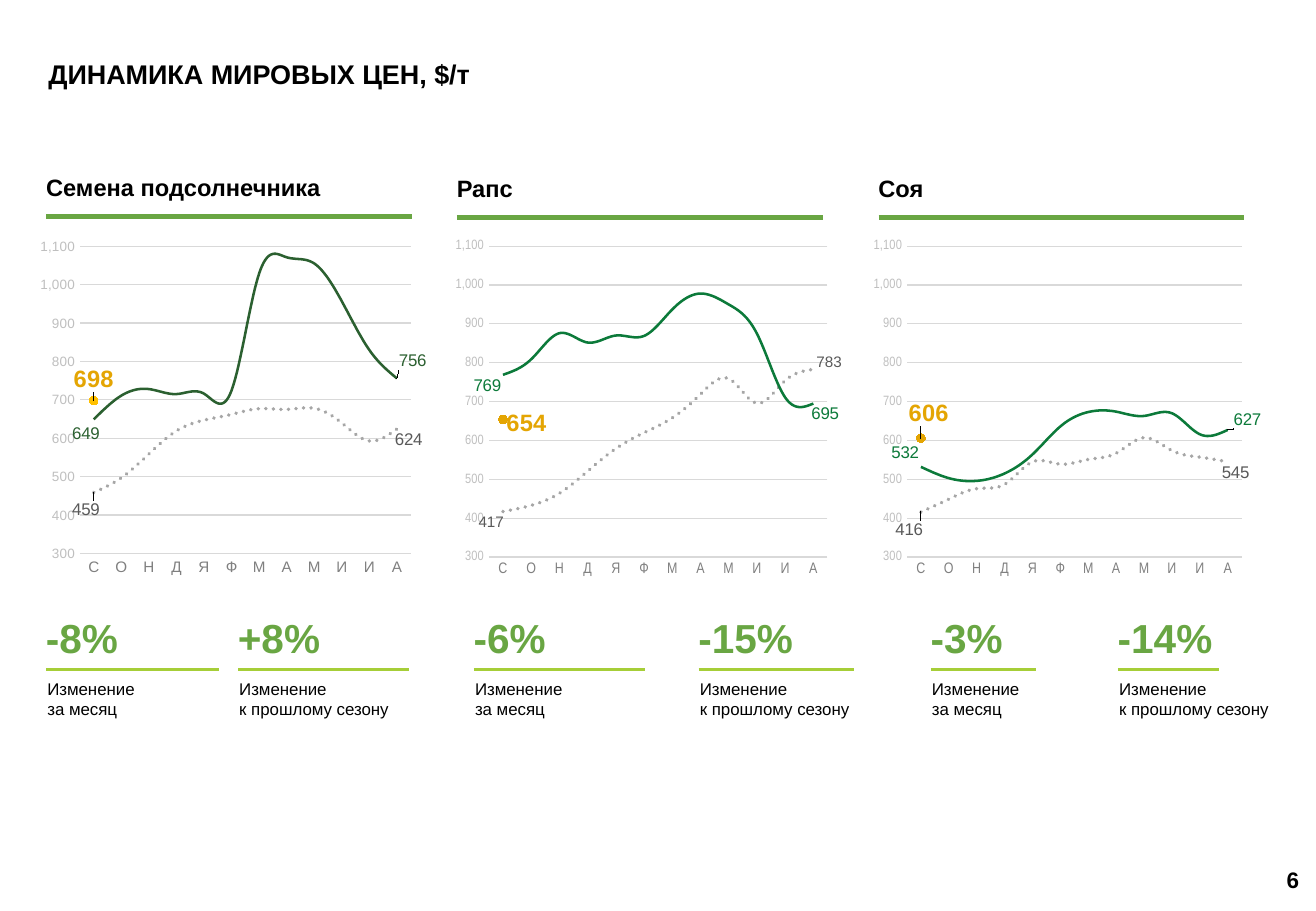
from dataclasses import dataclass
from pptx import Presentation
from pptx.chart.data import CategoryChartData
from pptx.dml.color import RGBColor
from pptx.enum.chart import (XL_CHART_TYPE, XL_LABEL_POSITION,
                             XL_MARKER_STYLE, XL_TICK_MARK)
from pptx.enum.dml import MSO_LINE
from pptx.enum.shapes import MSO_CONNECTOR
from pptx.enum.text import MSO_ANCHOR, PP_ALIGN
from pptx.oxml import parse_xml
from pptx.oxml.ns import nsdecls, qn
from pptx.util import Inches, Pt

SLIDE_WIDTH, SLIDE_HEIGHT = Inches(10.83), Inches(7.5)
MONTHS = list("СОНДЯФМАМИИА")


@dataclass(frozen=True)
class Theme:
    font: str = "Arial"
    narrow: str = "Arial Narrow"
    black: str = "000000"
    green: str = "69A643"
    lime: str = "A6CE38"
    dark_green: str = "2B6030"
    crop_green: str = "0C7A3A"
    gold: str = "E4A503"
    yellow: str = "FFC000"
    dots: str = "A6A6A6"
    label_grey: str = "595959"
    month_grey: str = "808080"
    value_grey: str = "BFBFBF"
    grid: str = "D9D9D9"
    title_size: float = 16
    heading_size: float = 14
    number_size: float = 24
    body_size: float = 10
    month_size: float = 9
    value_size: float = 8
    page_size: float = 13.3


THEME = Theme()


@dataclass
class Box:
    """Shares of the slide's size, in percent."""
    left: float
    top: float
    width: float
    height: float = 0

    def place(self):
        return (int(SLIDE_WIDTH * self.left / 100), int(SLIDE_HEIGHT * self.top / 100),
                int(SLIDE_WIDTH * self.width / 100), int(SLIDE_HEIGHT * self.height / 100))


@dataclass
class Crop:
    name: str
    box: Box
    chart_shift: float
    plot: tuple            # inner plot area: x, y, width, height
    axis_font: str
    line: str
    marker: str
    past: list
    previous: list
    current: int
    past_size: float
    label_shifts: list     # past first, past last, previous first, previous last, current
    changes: list          # text, caption, left shift, rule width


MONTH, SEASON = "Изменение\nза месяц", "Изменение\nк прошлому сезону"
CROPS = [
    Crop("Семена подсолнечника", Box(2.59, 18.67, 27.8, 77), -0.1, (0.12, 0.04, 0.84, 0.87),
         THEME.font, THEME.dark_green, THEME.yellow,
         [459, 497, 559, 619, 647, 662, 677, 675, 678, 640, 593, 624],
         [649, 711, 728, 715, 716, 724, 1028, 1071, 1055, 957, 830, 756], 698, 10,
         [(-0.02, 0.05), (0.03, 0.03), (-0.02, 0.04), (0.04, -0.05), (0, -0.06)],
         [("-8%", MONTH, 0, 13.1), ("+8%", SEASON, 14.58, 13)]),
    Crop("Рапс", Box(33.8, 18.8, 27.8, 77), 0.36, (0.1, 0.04, 0.86, 0.88),
         THEME.narrow, THEME.crop_green, THEME.gold,
         [417, 433, 464, 521, 579, 620, 658, 719, 759, 696, 754, 783],
         [769, 809, 876, 852, 870, 869, 937, 978, 950, 875, 711, 695], 654, 9,
         [(-0.03, 0.03), (0.04, -0.02), (-0.04, 0.03), (0.03, 0.03), (0.06, 0.01)],
         [("-6%", MONTH, 1.29, 13), ("-15%", SEASON, 18.37, 11.8)]),
    Crop("Соя", Box(65.84, 18.8, 27.8, 77), 0.09, (0.1, 0.04, 0.85, 0.88),
         THEME.narrow, THEME.crop_green, THEME.gold,
         [416, 449, 476, 487, 545, 539, 551, 567, 607, 574, 557, 545],
         [532, 503, 496, 515, 564, 636, 673, 674, 663, 670, 616, 627], 606, 10,
         [(-0.03, 0.05), (0.02, 0.03), (-0.04, -0.04), (0.05, -0.03), (0.02, -0.07)],
         [("-3%", MONTH, 3.97, 8), ("-14%", SEASON, 18.19, 7.7)]),
]


def style_font(font, size, color, name=THEME.font, bold=False):
    font.size, font.name, font.bold = Pt(size), name, bold
    font.color.rgb = RGBColor.from_string(color)


def add_text(slide, box, text, size, color=THEME.black, bold=False, spacing=None,
             anchor=MSO_ANCHOR.TOP, align=PP_ALIGN.LEFT, wrap=True):
    frame = slide.shapes.add_textbox(*box.place()).text_frame
    frame.word_wrap, frame.vertical_anchor = wrap, anchor
    frame.text = text
    for paragraph in frame.paragraphs:
        paragraph.alignment = align
        paragraph.line_spacing = spacing
        for run in paragraph.runs:
            style_font(run.font, size, color, bold=bold)


def add_rule(slide, box, color, weight):
    left, top, width, _ = box.place()
    rule = slide.shapes.add_connector(MSO_CONNECTOR.STRAIGHT, left, top, left + width, top)
    rule.line.color.rgb = RGBColor.from_string(color)
    rule.line.width = Pt(weight)
    rule._element.spPr.append(parse_xml(f"<a:effectLst {nsdecls('a')}/>"))


def manual_layout(inner=False, **shares):
    target = '<c:layoutTarget val="inner"/>' if inner else ""
    modes = '<c:xMode val="edge"/><c:yMode val="edge"/>' if inner else ""
    parts = "".join(f'<c:{key} val="{share}"/>' for key, share in shares.items())
    return parse_xml(f"<c:layout {nsdecls('c')}><c:manualLayout>{target}{modes}{parts}"
                     "</c:manualLayout></c:layout>")


def label_point(series, index, shift, size, color, bold=False):
    label = series.points[index].data_label
    style_font(label.font, size, color, bold=bold)
    label.position = XL_LABEL_POSITION.CENTER
    element = series._element.xpath(f'c:dLbls/c:dLbl[c:idx/@val="{index}"]')[0]
    element.insert(1, manual_layout(x=shift[0], y=shift[1]))


def style_series(series, color, weight, dotted=False):
    series.smooth = True
    series.marker.style = XL_MARKER_STYLE.NONE
    series.data_labels.show_value = False
    line = series.format.line
    line.color.rgb = RGBColor.from_string(color)
    line.width = Pt(weight)
    if dotted:
        line.dash_style = MSO_LINE.ROUND_DOT
        series._element.xpath("c:spPr/a:ln")[0].set("cap", "rnd")


def style_axes(chart, font_name):
    months, prices = chart.category_axis, chart.value_axis
    for axis, size, color in ((months, THEME.month_size, THEME.month_grey),
                              (prices, THEME.value_size, THEME.value_grey)):
        axis.major_tick_mark = axis.minor_tick_mark = XL_TICK_MARK.NONE
        style_font(axis.tick_labels.font, size, color, font_name)
    prices.minimum_scale, prices.maximum_scale, prices.major_unit = 300, 1100, 100
    prices.tick_labels.number_format = "#,##0"
    prices.tick_labels.number_format_is_linked = False
    prices.format.line.fill.background()
    for line in (months.format.line, prices.major_gridlines.format.line):
        line.color.rgb = RGBColor.from_string(THEME.grid)
        line.width = Pt(0.75)


def add_price_chart(slide, box, crop):
    data = CategoryChartData(number_format="0")
    data.categories = MONTHS
    data.add_series("Series 1", crop.past)
    data.add_series("Series 2", crop.previous)
    data.add_series("Series 3", [crop.current] + [None] * (len(MONTHS) - 1))
    chart = slide.shapes.add_chart(XL_CHART_TYPE.LINE_MARKERS, *box.place(), data).chart
    chart.has_legend = chart.has_title = False
    style_font(chart.font, THEME.body_size, THEME.black)
    chart.plots[0].vary_by_categories = False
    style_axes(chart, crop.axis_font)
    plot_area = chart._chartSpace.chart.plotArea
    for layout in plot_area.findall(qn("c:layout")):
        plot_area.remove(layout)
    plot_area.insert(0, manual_layout(True, **dict(zip("xywh", crop.plot))))

    # Price lines and the current price
    past, previous, current = chart.plots[0].series
    style_series(past, THEME.dots, 2.25, dotted=True)
    style_series(previous, crop.line, 1.5)
    style_series(current, crop.marker, 2.25)
    marker = current.marker
    marker.style, marker.size = XL_MARKER_STYLE.CIRCLE, 5
    marker.format.fill.solid()
    marker.format.fill.fore_color.rgb = RGBColor.from_string(crop.marker)
    marker.format.line.color.rgb = RGBColor.from_string(crop.marker)

    # Labels at the ends
    shifts = iter(crop.label_shifts)
    for series, size, color in ((past, crop.past_size, THEME.label_grey),
                                (previous, THEME.body_size, crop.line)):
        for index in (0, len(MONTHS) - 1):
            label_point(series, index, next(shifts), size, color)
    label_point(current, 0, next(shifts), THEME.heading_size, THEME.gold, bold=True)


def add_change(slide, box, value, caption):
    add_text(slide, Box(box.left, box.top, 13, 7.07), value, THEME.number_size,
             THEME.green, True, 0.9, MSO_ANCHOR.MIDDLE)
    add_rule(slide, Box(box.left + 0.92, box.top + 6.75, box.width), THEME.lime, 1.5)
    add_text(slide, Box(box.left + 0.1, box.top + 7.1, 15, 5.87), caption, THEME.body_size)


def add_crop(slide, crop):
    box = crop.box
    add_text(slide, Box(box.left, box.top, box.width, 4.13), crop.name,
             THEME.heading_size, bold=True, spacing=0.9, wrap=False)
    add_rule(slide, Box(box.left + 0.92, box.top + 5.1, box.width), THEME.green, 3)
    add_price_chart(slide, Box(box.left + crop.chart_shift, 25.47, 29.92, 38.8), crop)
    for value, caption, shift, rule_width in crop.changes:
        add_change(slide, Box(box.left + shift, 66.73, rule_width), value, caption)


def main():
    presentation = Presentation()
    presentation.slide_width, presentation.slide_height = SLIDE_WIDTH, SLIDE_HEIGHT
    slide = presentation.slides.add_slide(presentation.slide_layouts[6])
    add_text(slide, Box(2.77, 3.2, 92, 7.33), "ДИНАМИКА МИРОВЫХ ЦЕН, $/т",
             THEME.title_size, bold=True, spacing=0.9, anchor=MSO_ANCHOR.BOTTOM)
    for crop in CROPS:
        add_crop(slide, crop)
    add_text(slide, Box(91.97, 93.87, 7.66, 5.33), "6", THEME.page_size, bold=True,
             anchor=MSO_ANCHOR.MIDDLE, align=PP_ALIGN.RIGHT)
    presentation.save("out.pptx")


if __name__ == "__main__":
    main()
